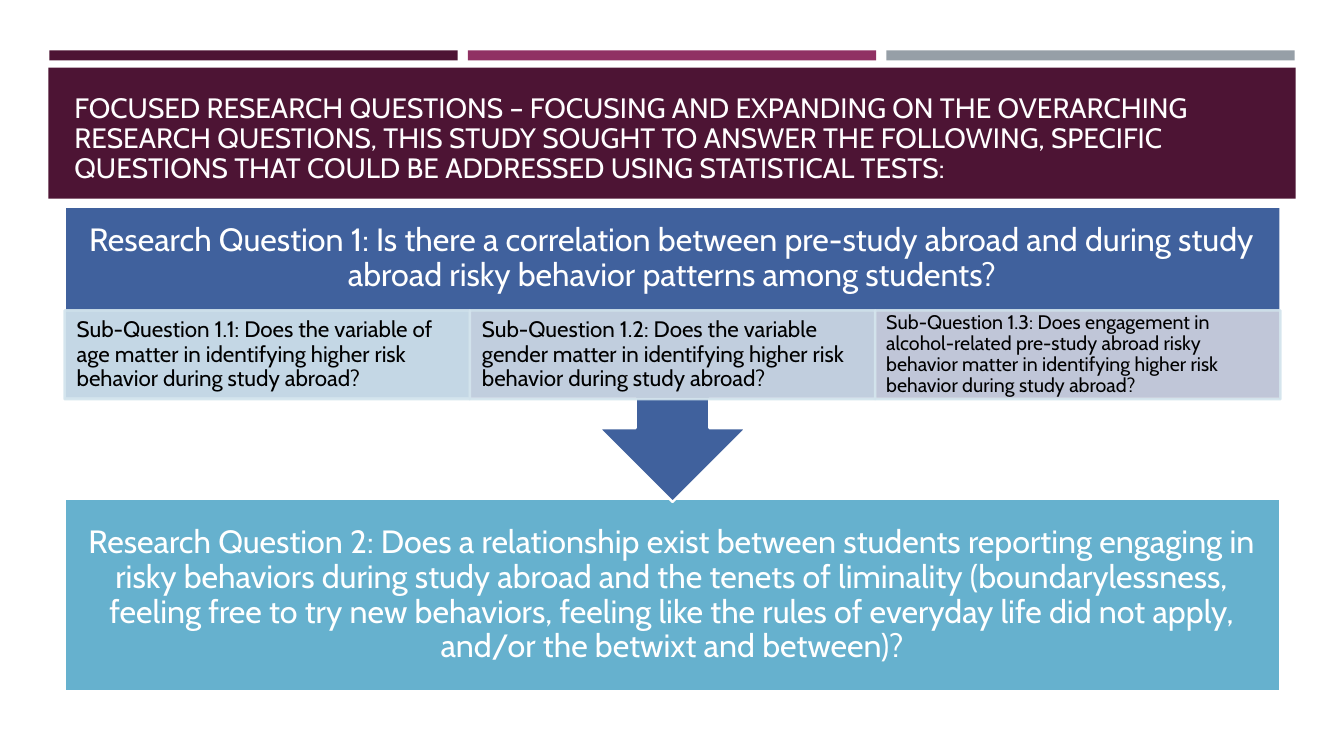
from pptx import Presentation
from pptx.dml.color import RGBColor
from pptx.enum.shapes import MSO_SHAPE
from pptx.enum.text import MSO_ANCHOR, PP_ALIGN
from pptx.oxml.ns import qn
from pptx.util import Inches, Pt
from lxml.etree import SubElement

THEME = {
    "font": "Cabin",
    "title_size": 20, "question_size": 23, "sub_size": 16, "small_sub_size": 14,
    "plum": "4D1434", "magenta": "903163", "grey": "969FA7",
    "blue": "40619D", "sky": "66B1CE", "pale": "D3E4ED",
    "sub_fills": ["D3E4ED", "D0DAE6", "CED2DF"],
    "white": "FFFFFF", "title_text": "FFFEFF", "black": "000000",
}

presentation = Presentation()
presentation.slide_width = Inches(13.33)
presentation.slide_height = Inches(7.5)
slide = presentation.slides.add_slide(presentation.slide_layouts[6])


def add_block(kind, box, fill, line=None):
    shape = slide.shapes.add_shape(kind, *[Inches(length) for length in box])
    shape.shadow.inherit = False
    shape.fill.solid()
    shape.fill.fore_color.rgb = RGBColor.from_string(fill)
    if line:
        shape.line.color.rgb = RGBColor.from_string(line)
        shape.line.width = Pt(1.75)
    else:
        shape.line.fill.background()
    return shape


def write_text(shape, text, size, color, align, anchor, inset_x, inset_y):
    frame = shape.text_frame
    frame.word_wrap = True
    frame.vertical_anchor = anchor
    frame.margin_left = frame.margin_right = Inches(inset_x)
    frame.margin_top = frame.margin_bottom = Inches(inset_y)
    paragraph = frame.paragraphs[0]
    paragraph.alignment = align
    paragraph.line_spacing = 0.9
    run = paragraph.add_run()
    run.text = text
    run.font.name = THEME["font"]
    run.font.size = Pt(size)
    run.font.color.rgb = RGBColor.from_string(color)


BAR_LEFT, BAR_PITCH, BAR_WIDTH = 0.49, 4.15, 4.05
LEFT, WIDTH = 0.64, 12.06
QUESTION_TOP, QUESTION_HEIGHT = 2.05, 1.03
SUB_TOP, SUB_HEIGHT = QUESTION_TOP + QUESTION_HEIGHT, 0.88

for column, color in enumerate(["plum", "magenta", "grey"]):
    add_block(MSO_SHAPE.RECTANGLE,
              (BAR_LEFT + column * BAR_PITCH, 0.5, BAR_WIDTH, 0.1), THEME[color])

add_block(MSO_SHAPE.RECTANGLE, (0.48, 0.67, 12.37, 1.3), THEME["plum"])
title = slide.shapes.add_textbox(Inches(LEFT), Inches(0.77), Inches(WIDTH), Inches(1.11))
write_text(title,
           "FOCUSED RESEARCH QUESTIONS – FOCUSING AND EXPANDING ON THE OVERARCHING "
           "RESEARCH QUESTIONS, THIS STUDY SOUGHT TO ANSWER THE FOLLOWING, SPECIFIC "
           "QUESTIONS THAT COULD BE ADDRESSED USING STATISTICAL TESTS:",
           THEME["title_size"], THEME["title_text"],
           PP_ALIGN.LEFT, MSO_ANCHOR.BOTTOM, 0.1, 0.05)

second_question = add_block(MSO_SHAPE.RECTANGLE, (LEFT, 4.95, WIDTH, 1.91),
                            THEME["sky"], THEME["white"])
write_text(second_question,
           "Research Question 2: Does a relationship exist between students reporting "
           "engaging in risky behaviors during study abroad and the tenets of liminality "
           "(boundarylessness, feeling free to try new behaviors, feeling like the rules "
           "of everyday life did not apply, and/or the betwixt and between)?",
           THEME["question_size"], THEME["white"],
           PP_ALIGN.CENTER, MSO_ANCHOR.MIDDLE, 0.18, 0.18)

callout = add_block(MSO_SHAPE.UP_ARROW_CALLOUT, (LEFT, QUESTION_TOP, WIDTH, 2.93),
                    THEME["blue"], THEME["white"])
callout.rotation = 180
first_question = slide.shapes.add_textbox(
    Inches(LEFT), Inches(QUESTION_TOP), Inches(WIDTH), Inches(QUESTION_HEIGHT))
write_text(first_question,
           "Research Question 1: Is there a correlation between pre-study abroad and "
           "during study abroad risky behavior patterns among students?",
           THEME["question_size"], THEME["white"],
           PP_ALIGN.CENTER, MSO_ANCHOR.MIDDLE, 0.18, 0.18)

sub_questions = [
    ("Sub-Question 1.1: Does the variable of age matter in identifying higher risk "
     "behavior during study abroad?", THEME["sub_size"], 0.12),
    ("Sub-Question 1.2: Does the variable gender matter in identifying higher risk "
     "behavior during study abroad?", THEME["sub_size"], 0.12),
    ("Sub-Question 1.3: Does engagement in alcohol-related pre-study abroad risky "
     "behavior matter in identifying higher risk behavior during study abroad?",
     THEME["small_sub_size"], 0.11),
]
sub_width = WIDTH / len(sub_questions)
for column, (text, size, inset) in enumerate(sub_questions):
    sub_box = add_block(MSO_SHAPE.RECTANGLE,
                        (LEFT + column * sub_width, SUB_TOP, sub_width, SUB_HEIGHT),
                        THEME["sub_fills"][column], THEME["pale"])
    for color in list(sub_box._element.spPr.iter(qn("a:srgbClr"))):
        SubElement(color, qn("a:alpha")).set("val", "90000")
    write_text(sub_box, text, size, THEME["black"],
               PP_ALIGN.LEFT, MSO_ANCHOR.MIDDLE, inset, 0.02)

presentation.save("out.pptx")
